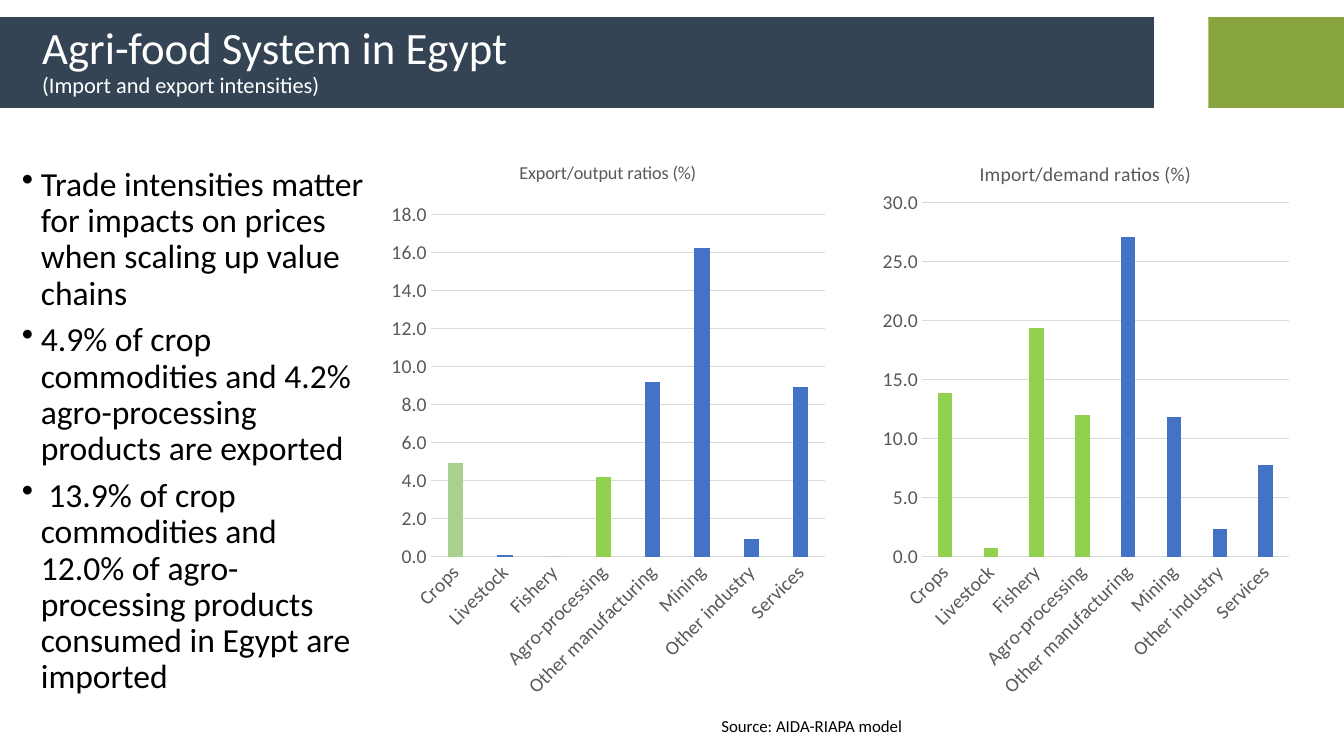
from dataclasses import dataclass, field

import pptx
import pptx.chart.data
import pptx.dml.color
import pptx.enum.chart
import pptx.enum.shapes
import pptx.enum.text
import pptx.oxml
import pptx.oxml.ns
import pptx.util
from pptx.util import Cm, Pt


@dataclass(frozen=True)
class Theme:
    font: str = "Calibri"
    navy: str = "344455"
    olive: str = "88A43D"
    white: str = "FFFFFF"
    black: str = "000000"
    grey: str = "595959"
    grid: str = "D9D9D9"
    blue: str = "4472C4"
    green: str = "92D050"
    pale_green: str = "A9D18E"
    title_size: float = 32
    subtitle_size: float = 16
    body_size: float = 24
    axis_size: float = 14
    source_size: float = 12


THEME = Theme()


@dataclass(frozen=True)
class Box:
    """Position and size in centimetres."""
    left: float
    top: float
    width: float
    height: float

    def lengths(self) -> tuple:
        return Cm(self.left), Cm(self.top), Cm(self.width), Cm(self.height)


@dataclass(frozen=True)
class Bar:
    box: Box
    color: str


@dataclass(frozen=True)
class RatioChart:
    title: str
    title_size: float
    title_at: tuple
    box: Box
    values: tuple
    axis_max: float
    axis_step: float
    plot: tuple
    point_colors: dict = field(default_factory=dict)


SECTORS = ("Crops", "Livestock", "Fishery", "Agro-processing",
           "Other manufacturing", "Mining", "Other industry", "Services")

BARS = (
    Bar(Box(-0.56, 0.43, 29.64, 2.29), THEME.navy),
    Bar(Box(30.45, 0.43, 4.27, 2.29), THEME.olive),
)

CHARTS = (
    RatioChart("Export/output ratios (%)", 13, (0.27, 0.04), Box(9.6, 3.53, 11.43, 14.38),
               (4.9, 0.1, 0, 4.2, 9.2, 16.2, 0.9, 8.9), 18, 2,
               (0.11, 0.13, 0.87, 0.6), {0: THEME.pale_green, 3: THEME.green}),
    RatioChart("Import/demand ratios (%)", 14, (0.25, 0.04), Box(21.79, 3.53, 11.13, 14.38),
               (13.9, 0.7, 19.4, 12, 27.1, 11.8, 2.3, 7.8), 30, 5,
               (0.13, 0.11, 0.83, 0.62), dict.fromkeys(range(4), THEME.green)),
)

BULLETS = (
    "Trade intensities matter for impacts on prices when scaling up value chains",
    "4.9% of crop commodities and 4.2% agro-processing products are exported",
    " 13.9% of crop commodities and 12.0% of agro-processing products consumed in Egypt are imported",
)


def rgb(color: str) -> pptx.dml.color.RGBColor:
    return pptx.dml.color.RGBColor.from_string(color)


def set_font(font, size: float, color: str) -> None:
    font.name = THEME.font
    font.size = Pt(size)
    font.bold = False
    font.color.rgb = rgb(color)


def set_line(line, color: str) -> None:
    line.color.rgb = rgb(color)
    line.width = Pt(0.75)


def layout_xml(values: tuple, inner: bool = False):
    """Manual chart layout from x, y and, if given, width and height."""
    target = '<c:layoutTarget val="inner"/>' if inner else ""
    modes = '<c:xMode val="edge"/><c:yMode val="edge"/>'
    sizes = "".join(f'<c:{k} val="{v}"/>' for k, v in zip("xywh", values))
    return pptx.oxml.parse_xml(
        f'<c:layout {pptx.oxml.ns.nsdecls("c")}><c:manualLayout>'
        f"{target}{modes}{sizes}</c:manualLayout></c:layout>")


def add_bar(s, bar: Bar):
    sp = s.shapes.add_shape(pptx.enum.shapes.MSO_SHAPE.RECTANGLE, *bar.box.lengths())
    sp.shadow.inherit = False
    sp.fill.solid()
    sp.fill.fore_color.rgb = rgb(bar.color)
    sp.line.fill.background()
    return sp


def fill_title(title) -> None:
    title.left, title.top, title.width, title.height = Box(0.81, -0.08, 29, 3.3).lengths()
    tf = title.text_frame
    tf.text = "Agri-food System in Egypt\n(Import and export intensities)"
    tf.auto_size = pptx.enum.text.MSO_AUTO_SIZE.NONE
    tf.vertical_anchor = pptx.enum.text.MSO_ANCHOR.MIDDLE
    for p, size in zip(tf.paragraphs, (THEME.title_size, THEME.subtitle_size)):
        p.alignment = pptx.enum.text.PP_ALIGN.LEFT
        p.line_spacing = 0.9
        set_font(p.runs[0].font, size, THEME.white)


def add_bullets(s, box: Box) -> None:
    tf = s.shapes.add_textbox(*box.lengths()).text_frame
    tf.word_wrap = True
    tf.text = "\n".join(BULLETS)
    for i, p in enumerate(tf.paragraphs):
        pPr = p._p.get_or_add_pPr()
        pPr.set("marL", str(Cm(0.48)))
        pPr.set("indent", str(Cm(-0.48)))
        pPr.append(pptx.oxml.parse_xml(
            f'<a:buChar {pptx.oxml.ns.nsdecls("a")} char="•"/>'))
        p.line_spacing = 0.9
        p.space_before = Pt(7.5 if i else 0)
        set_font(p.runs[0].font, THEME.body_size, THEME.black)


def add_source(s, box: Box) -> None:
    tf = s.shapes.add_textbox(*box.lengths()).text_frame
    tf.word_wrap = False
    tf.text = "Source: AIDA-RIAPA model"
    set_font(tf.paragraphs[0].runs[0].font, THEME.source_size, THEME.black)


def add_ratio_chart(s, spec_: RatioChart) -> None:
    data = pptx.chart.data.CategoryChartData()
    data.categories = SECTORS
    data.add_series("Series 1", spec_.values)
    chart = s.shapes.add_chart(pptx.enum.chart.XL_CHART_TYPE.COLUMN_CLUSTERED,
                               *spec_.box.lengths(), data).chart
    set_font(chart.font, THEME.axis_size, THEME.grey)
    chart.has_legend = False

    # Title
    tf = chart.chart_title.text_frame
    tf.text = spec_.title
    set_font(tf.paragraphs[0].runs[0].font, spec_.title_size, THEME.grey)
    chart.chart_title.include_in_layout = False
    chart.chart_title._element.find(pptx.oxml.ns.qn("c:tx")).addnext(layout_xml(spec_.title_at))

    # Columns
    plot = chart.plots[0]
    plot.gap_width, plot.overlap, plot.vary_by_categories = 219, -27, False
    series = plot.series[0]
    series.format.fill.solid()
    series.format.fill.fore_color.rgb = rgb(THEME.blue)
    for i, color in spec_.point_colors.items():
        fill = series.points[i].format.fill
        fill.solid()
        fill.fore_color.rgb = rgb(color)

    # Axes
    for axis in (chart.category_axis, chart.value_axis):
        axis.major_tick_mark = axis.minor_tick_mark = pptx.enum.chart.XL_TICK_MARK.NONE
        set_font(axis.tick_labels.font, THEME.axis_size, THEME.grey)
    sectors, ratios = chart.category_axis, chart.value_axis
    set_line(sectors.format.line, THEME.grid)
    body = sectors._element.find(pptx.oxml.ns.qn("c:txPr")).find(pptx.oxml.ns.qn("a:bodyPr"))
    body.set("rot", "-2700000")
    ratios.minimum_scale, ratios.maximum_scale = 0, spec_.axis_max
    ratios.major_unit = spec_.axis_step
    ratios.format.line.fill.background()
    set_line(ratios.major_gridlines.format.line, THEME.grid)
    ratios.tick_labels.number_format = "#,##0.0"
    ratios.tick_labels.number_format_is_linked = False

    # Plot area
    area = chart._chartSpace.chart.plotArea
    for old in area.findall(pptx.oxml.ns.qn("c:layout")):
        area.remove(old)
    area.insert(0, layout_xml(spec_.plot, inner=True))


def main() -> None:
    prs = pptx.Presentation()
    prs.slide_width, prs.slide_height = Cm(33.87), Cm(19.05)
    s = prs.slides.add_slide(prs.slide_layouts[5])

    # Header bars, with the title in front of them
    bars = [add_bar(s, bar) for bar in BARS]
    title = s.shapes.title
    fill_title(title)
    bars[-1].element.addnext(title.element)

    # Source line, charts and bullets
    add_source(s, Box(17.93, 17.91, 5.13, 0.76))
    for ratio_chart in CHARTS:
        add_ratio_chart(s, ratio_chart)
    add_bullets(s, Box(0.3, 4.09, 9.17, 14.96))
    prs.save("out.pptx")


if __name__ == "__main__":
    main()
